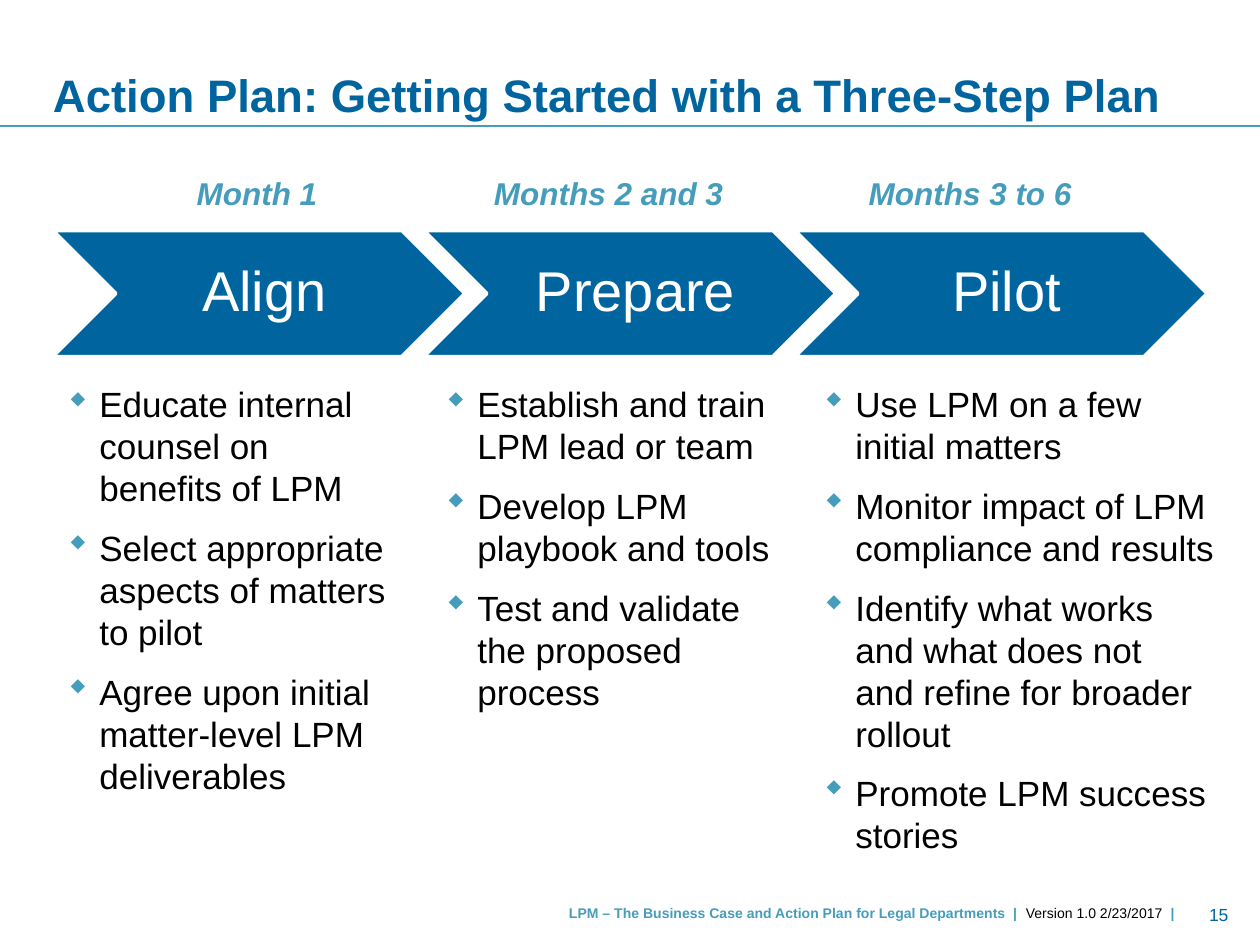
from lxml import etree
from pptx import Presentation
from pptx.dml.color import RGBColor
from pptx.enum.shapes import MSO_CONNECTOR, MSO_SHAPE
from pptx.enum.text import MSO_ANCHOR, PP_ALIGN
from pptx.oxml.ns import qn
from pptx.util import Inches, Pt

LEFT, CENTER, RIGHT = PP_ALIGN.LEFT, PP_ALIGN.CENTER, PP_ALIGN.RIGHT
TOP, MIDDLE, BOTTOM = MSO_ANCHOR.TOP, MSO_ANCHOR.MIDDLE, MSO_ANCHOR.BOTTOM
CHEVRON, STRAIGHT = MSO_SHAPE.CHEVRON, MSO_CONNECTOR.STRAIGHT

FONT = "Arial"
BULLET_FONT, DIAMOND = "Wingdings", "w"  # "w" is the diamond in this symbol font
CHEVRON_PITCH = 5.89 / 2
COLORS = {"blue": "00659E", "teal": "469DBB", "black": "000000", "white": "FFFFFF"}

# Month label, its left and the step name; then bullet box left, width, height and items
STEPS = [
    ("Month 1", 0.75, "Align", (0.44, 2.83, 3.67), [
        "Educate internal counsel on benefits of LPM",
        "Select appropriate aspects of matters to pilot",
        "Agree upon initial matter-level LPM deliverables"]),
    ("Months 2 and 3", 3.54, "Prepare", (3.44, 2.83, 3.33), [
        "Establish and train LPM lead or team",
        "Develop LPM playbook and tools",
        "Test and validate the proposed process"]),
    ("Months 3 to 6", 6.41, "Pilot", (6.44, 3.34, 4), [
        "Use LPM on a few initial matters",
        "Monitor impact of LPM compliance and results",
        "Identify what works and what does not \nand refine for broader rollout",
        "Promote LPM success stories"]),
]


def rgb(name):
    return RGBColor.from_string(COLORS[name])


def add_run(p, text, size, color, bold=False, italic=False):
    r = p.add_run()
    r.text = text
    f = r.font
    f.name, f.size, f.bold, f.italic = FONT, Pt(size), bold, italic
    f.color.rgb = rgb(color)


def add_box(s, left, top, width, height, anchor=TOP, align=LEFT, margins=None, wrap=True):
    tf = s.shapes.add_textbox(Inches(left), Inches(top), Inches(width), Inches(height)).text_frame
    tf.word_wrap, tf.vertical_anchor = wrap, anchor
    if margins is not None:
        tf.margin_left = tf.margin_top = tf.margin_right = tf.margin_bottom = Inches(margins)
    tf.paragraphs[0].alignment = align
    return tf


def add_bullet(p, color):
    pPr = p._p.get_or_add_pPr()
    pPr.set("marL", str(Inches(0.25)))
    pPr.set("indent", str(-Inches(0.25)))
    bu_color = etree.SubElement(pPr, qn("a:buClr"))
    etree.SubElement(bu_color, qn("a:srgbClr")).set("val", COLORS[color])
    bu_font = etree.SubElement(pPr, qn("a:buFont"))
    bu_font.set("typeface", BULLET_FONT)
    bu_font.set("pitchFamily", "2")
    bu_font.set("charset", "2")
    etree.SubElement(pPr, qn("a:buChar")).set("char", DIAMOND)


def add_title(s, left, top, width, height):
    p = add_box(s, left, top, width, height, BOTTOM, margins=0).paragraphs[0]
    p.line_spacing = 0.9
    add_run(p, "Action Plan: Getting Started with a Three-Step Plan", 26, "blue", bold=True)
    # Rule under the title
    rule_top = Inches(top + height + 0.03)
    rule = s.shapes.add_connector(STRAIGHT, 0, rule_top, Inches(10), rule_top)
    rule.line.color.rgb = rgb("teal")
    rule.line.width = Pt(0.75)
    etree.SubElement(rule._element.spPr, qn("a:effectLst"))


def add_month(s, left, top, width, height, text):
    p = add_box(s, left, top, width, height, align=CENTER).paragraphs[0]
    add_run(p, text, 18, "teal", bold=True, italic=True)


def add_chevron(s, left, top, width, height, text):
    sp = s.shapes.add_shape(CHEVRON, Inches(left), Inches(top), Inches(width), Inches(height))
    sp.shadow.inherit = False
    sp.fill.solid()
    sp.fill.fore_color.rgb = rgb("blue")
    sp.line.color.rgb = rgb("white")
    sp.line.width = Pt(2)
    tf = sp.text_frame
    tf.word_wrap, tf.vertical_anchor = True, MIDDLE
    tf.margin_left, tf.margin_right = Inches(0.14), Inches(0.05)
    p = tf.paragraphs[0]
    p.alignment, p.line_spacing = CENTER, 0.9
    add_run(p, text, 32, "white")


def add_bullets(s, left, top, width, height, items):
    tf = add_box(s, left, top, width, height)
    for i, item in enumerate(items):
        p = tf.add_paragraph() if i else tf.paragraphs[0]
        if i:
            p.space_before = Pt(10)
        add_bullet(p, "teal")
        for j, line in enumerate(item.split("\n")):
            if j:
                p.add_line_break()
            add_run(p, line, 20, "black")


def add_footer(s, left, top, width, height):
    p = add_box(s, left, top, width, height, align=RIGHT).paragraphs[0]
    add_run(p, "LPM – The Business Case and Action Plan for Legal Departments  |", 8, "teal", bold=True)
    add_run(p, "  Version 1.0 2/23/2017  ", 8, "black")
    add_run(p, "|", 8, "teal", bold=True)
    # Page number
    p = add_box(s, left + width + 0.16, top + 0.04, 0.17, 0.17, MIDDLE, RIGHT,
                margins=0, wrap=False).paragraphs[0]
    add_run(p, "15", 10, "blue")


def main():
    prs = Presentation()
    prs.slide_width, prs.slide_height = Inches(10), Inches(7.5)
    s = prs.slides.add_slide(prs.slide_layouts[6])
    add_title(s, 0.42, 0.06, 9.58, 0.91)
    for i, (month, month_left, name, (left, width, height), items) in enumerate(STEPS):
        add_chevron(s, 0.42 + i * CHEVRON_PITCH, 1.83, 3.27, 1, name)
        add_month(s, month_left, 1.33, 2.58, 0.4, month)
        add_bullets(s, left, 2.99, width, height, items)
    add_footer(s, 3.92, 7.13, 5.5, 0.24)
    prs.save("out.pptx")


if __name__ == "__main__":
    main()
